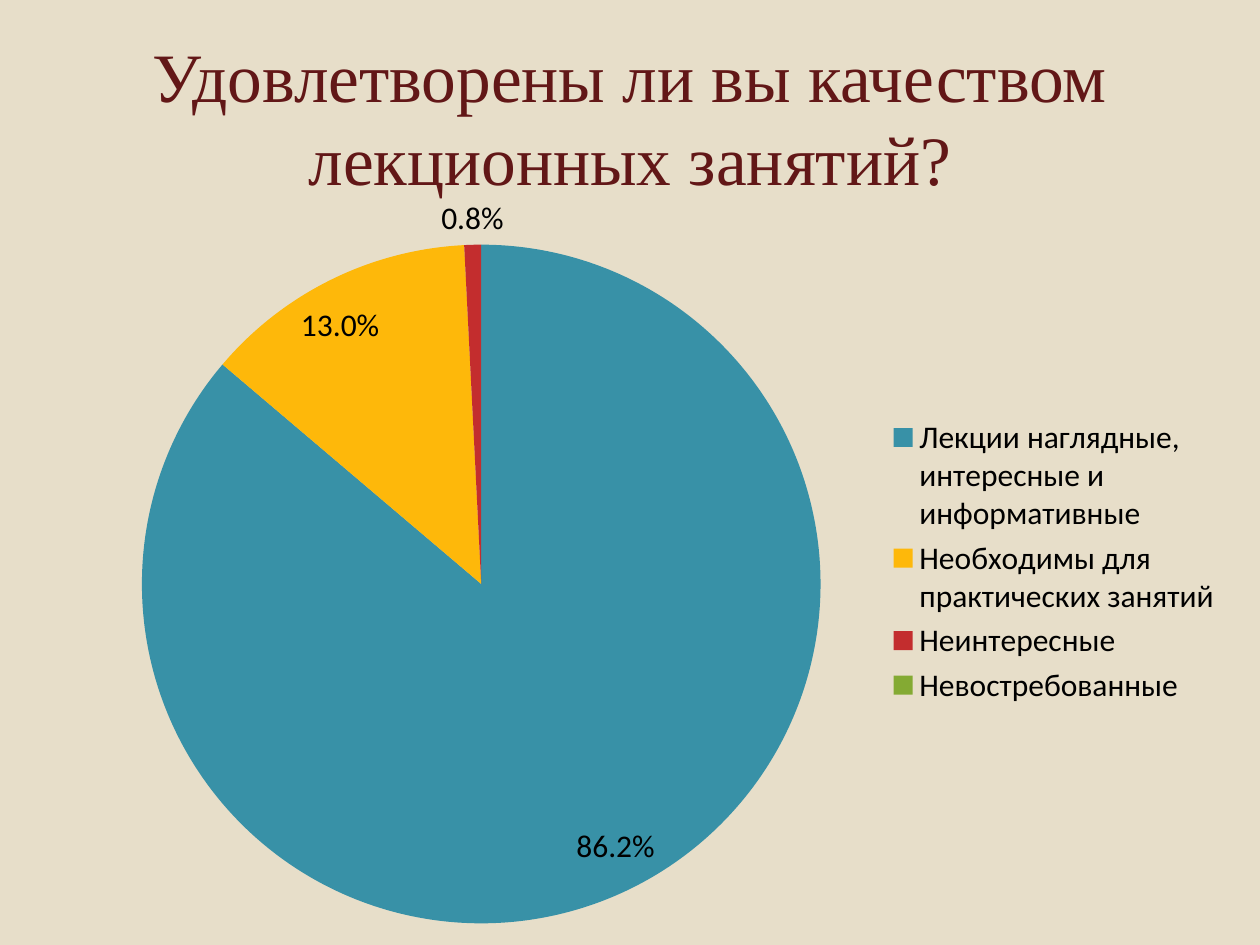
from lxml import etree
from pptx import Presentation
from pptx.chart.data import CategoryChartData
from pptx.dml.color import RGBColor
from pptx.enum.chart import XL_CHART_TYPE, XL_LABEL_POSITION, XL_LEGEND_POSITION
from pptx.enum.text import MSO_ANCHOR, PP_ALIGN
from pptx.oxml import parse_xml
from pptx.oxml.ns import nsdecls, qn
from pptx.util import Inches, Pt

PIE = XL_CHART_TYPE.PIE
BEST_FIT = XL_LABEL_POSITION.BEST_FIT
RIGHT = XL_LEGEND_POSITION.RIGHT
MIDDLE = MSO_ANCHOR.MIDDLE
CENTER = PP_ALIGN.CENTER

ANSWERS = [
    ("Лекции наглядные, интересные и информативные", 86.2, "3891A7"),
    ("Необходимы для практических занятий", 13, "FEB80A"),
    ("Неинтересные", 0.8, "C32D2E"),
    ("Невостребованные", 0, "84AA33"),
]
PIE_LAYOUT = {"x": 0.05, "y": 0.08, "w": 0.59, "h": 0.9}


def color(value):
    return RGBColor.from_string(value)


def set_font(font, name, size, value):
    for attribute, setting in {"name": name, "size": Pt(size)}.items():
        setattr(font, attribute, setting)
    font.color.rgb = color(value)


presentation = Presentation()
presentation.slide_width = Inches(10)
presentation.slide_height = Inches(7.5)
slide = presentation.slides.add_slide(presentation.slide_layouts[6])
slide.background.fill.solid()
slide.background.fill.fore_color.rgb = color("E7DEC9")

title = slide.shapes.add_textbox(Inches(0.5), Inches(0.3), Inches(9), Inches(1.25))
title.text_frame.word_wrap = True
title.text_frame.vertical_anchor = MIDDLE
paragraph = title.text_frame.paragraphs[0]
paragraph.alignment = CENTER
run = paragraph.add_run()
run.text = "Удовлетворены ли вы качеством лекционных занятий?"
set_font(run.font, "Times New Roman", 39.6, "621717")

chart_data = CategoryChartData()
chart_data.categories = [answer for answer, share, fill in ANSWERS]
chart_data.add_series("Series 1", [share for answer, share, fill in ANSWERS])
chart = slide.shapes.add_chart(
    PIE, Inches(0.67), Inches(1.44), Inches(9.13), Inches(6.03), chart_data
).chart
set_font(chart.font, "Calibri", 18, "000000")
chart.has_title = False
chart.has_legend = True
chart.legend.position = RIGHT
chart.legend.include_in_layout = False

plot = chart.plots[0]
plot.vary_by_categories = True
series = plot.series[0]
for index, (answer, share, fill) in enumerate(ANSWERS):
    point_fill = series.points[index].format.fill
    point_fill.solid()
    point_fill.fore_color.rgb = color(fill)

labels = series.data_labels
label_format = {
    "show_percentage": True,
    "show_value": False,
    "number_format": "0.0%",
    "number_format_is_linked": False,
    "position": BEST_FIT,
}
for attribute, setting in label_format.items():
    setattr(labels, attribute, setting)
for index, (answer, share, fill) in enumerate(ANSWERS):
    if share == 0:
        labels._element.insert(0, parse_xml(
            f'<c:dLbl {nsdecls("c")}><c:idx val="{index}"/><c:delete val="1"/></c:dLbl>'
        ))

plot_area = chart._chartSpace.chart.plotArea
for layout in plot_area.findall(qn("c:layout")):
    plot_area.remove(layout)
layout = etree.Element(qn("c:layout"))
manual_layout = etree.SubElement(layout, qn("c:manualLayout"))
layout_settings = {"layoutTarget": "inner", "xMode": "edge", "yMode": "edge"} | PIE_LAYOUT
for tag, setting in layout_settings.items():
    etree.SubElement(manual_layout, qn(f"c:{tag}")).set("val", str(setting))
plot_area.insert(0, layout)

presentation.save("out.pptx")
